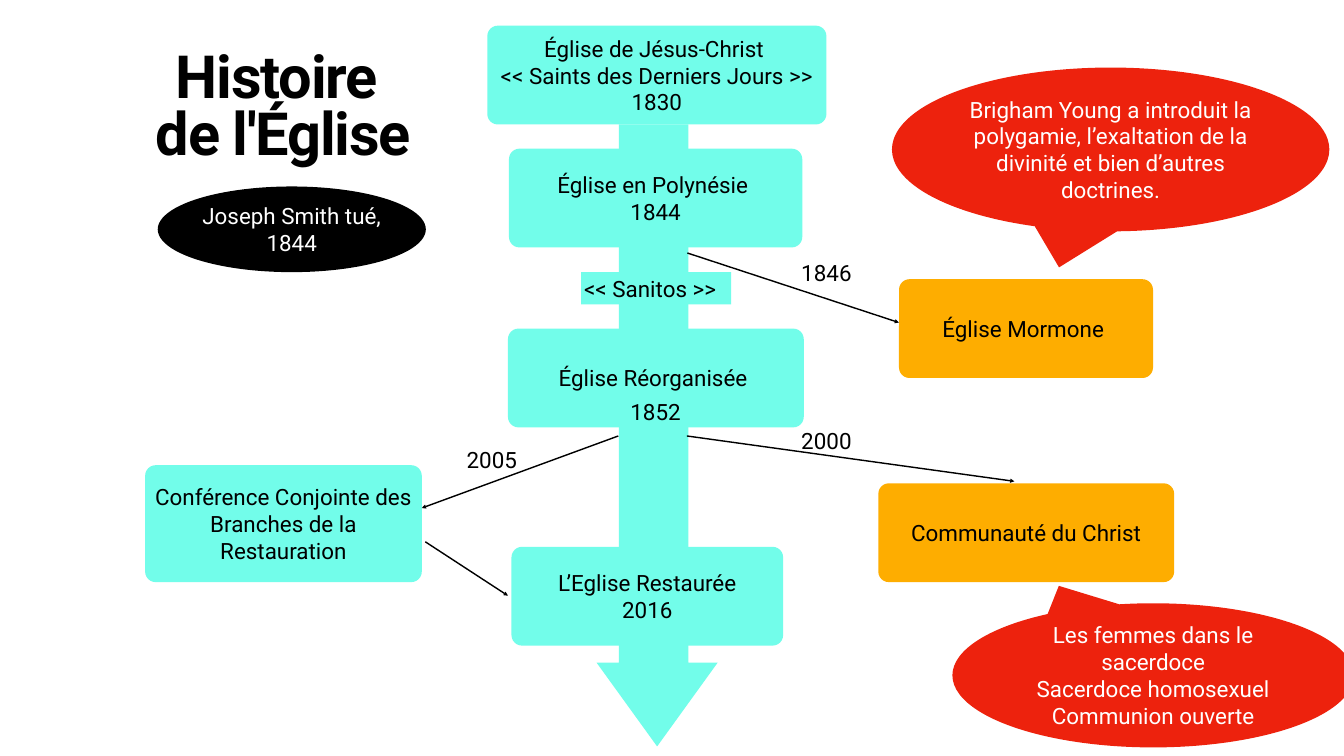
from lxml.etree import SubElement as Sub
from pptx import Presentation
from pptx.dml.color import RGBColor
from pptx.enum.shapes import MSO_CONNECTOR as Link, MSO_SHAPE as Form
from pptx.enum.text import MSO_ANCHOR as Anchor, PP_ALIGN as Align
from pptx.oxml.ns import qn
from pptx.util import Inches, Pt

AQUA, GOLD, RED = "72FDEA", "FEAD00", "ED220D"
BLACK, WHITE = "000000", "FFFFFF"
FRAME = dict(vertical_anchor=Anchor.MIDDLE, margin_left=Inches(0.06), margin_right=Inches(0.06),
             margin_top=Inches(0.06), margin_bottom=Inches(0.06))
BODY = dict(name="Roboto", size=Pt(32), bold=False)
HEAD = dict(name="Roboto", size=Pt(85), bold=True)
ROW = 1.96
YEAR = 1.6


def paint(fmt, tone):
    """Give a fill a solid colour."""
    fmt.solid()
    fmt.fore_color.rgb = RGBColor.from_string(tone)


def style(item, values):
    """Set every attribute named in a dict."""
    for key, value in values.items():
        setattr(item, key, value)


def write(shape, lines, tone=BLACK, font=BODY, wrap=True, align=Align.CENTER, space=1.0):
    """Write one paragraph for each line and format it."""
    frame = shape.text_frame
    style(frame, FRAME | dict(word_wrap=wrap))
    frame.text = "\n".join(lines)
    for para in frame.paragraphs:
        style(para, dict(alignment=align, line_spacing=space, space_before=Pt(0)))
        for run in para.runs:
            style(run.font, font)
            paint(run.font.fill, tone)


def plain(shape, tone):
    """Give a shape a flat fill with no line or shadow."""
    shape.shadow.inherit = False
    paint(shape.fill, tone)
    shape.line.fill.background()


def block(slide, box, lines, fill=AQUA, form=Form.ROUNDED_RECTANGLE, adj=(0.106,), **text):
    """Add a filled shape with text."""
    shape = slide.shapes.add_shape(form, *map(Inches, box))
    plain(shape, fill)
    for at, value in enumerate(adj):
        shape.adjustments[at] = value
    write(shape, lines, **text)


def label(slide, mid, top, text):
    """Add a year with no fill, centred on a point."""
    box = slide.shapes.add_textbox(*map(Inches, (mid - YEAR / 2, top, YEAR, 0.64)))
    write(box, [text])


def arrow(slide, *ends):
    """Add a thin arrow between two points."""
    line = slide.shapes.add_connector(Link.STRAIGHT, *map(Inches, ends))
    paint(line.line.fill, BLACK)
    line.line.width = Pt(2)
    Sub(line.line._get_or_add_ln(), qn("a:tailEnd"), type="triangle")
    Sub(line._element.spPr, qn("a:effectLst"))


def title(slide, left, top, width, height):
    """Place the slide title and the note on the death below it."""
    head = slide.shapes.title
    style(head, dict(left=Inches(left), top=Inches(top), width=Inches(width), height=Inches(height)))
    write(head, ["Histoire ", "de l'Église"], font=HEAD, wrap=False, space=0.8)
    for para in head.text_frame.paragraphs:
        for run in para.runs:
            run._r.get_or_add_rPr().set("spc", "-170")
    block(slide, (left + 0.32, top + 2.85, 5.32, 1.7), ["Joseph Smith tué, 1844"],
          BLACK, Form.OVAL, (), tone=WHITE)


def trunk(slide, left, top):
    """Draw the main arrow and the churches along it."""
    points = [(2.61, 1.96), (2.61, 12.64), (2.17, 12.64), (3.37, 14.3),
              (4.57, 12.64), (3.99, 12.64), (3.99, 1.96)]
    spots = [(Inches(left + x), Inches(top + y)) for x, y in points]
    shaft = slide.shapes.build_freeform(*spots[0])
    shaft.add_line_segments(spots[1:])
    plain(shaft.convert_to_shape(), AQUA)
    stops = [
        (0, 0, 6.73, ["Église de Jésus-Christ ", "<< Saints des Derniers Jours >>", "1830"]),
        (0.43, 2.44, 5.82, ["Église en Polynésie ", "1844"]),
        (0.41, 6.01, 5.87, ["Église Réorganisée "]),
        (0.48, 10.34, 5.39, ["L’Eglise Restaurée", "2016"]),
    ]
    for x, y, width, lines in stops:
        block(slide, (left + x, top + y, width, ROW), lines)
    label(slide, left + 3.34, top + 7.33, "1852")
    block(slide, (left + 1.86, top + 4.89, 2.98, 0.64), ["<< Sanitos >>"],
          form=Form.RECTANGLE, adj=(), align=Align.LEFT)


def west(slide, left, top):
    """Draw the branch that leaves the trunk and joins it again."""
    block(slide, (left, top, 5.49, 2.32), ["Conférence Conjointe des Branches de la Restauration"],
          adj=(0.09,))
    arrow(slide, left + 9.39, top - 0.58, left + 5.49, top + 0.85)
    arrow(slide, left + 5.56, top + 1.52, left + 7.2, top + 2.59)
    label(slide, left + 6.88, top - 0.43, "2005")


def east(slide, box, name, year, spot, ends, bubble, adj, lines):
    """Draw a church that split off, with its year and its callout."""
    left, top = box[:2]
    block(slide, box, [name], GOLD)
    arrow(slide, *(value + base for value, base in zip(ends, (left, top) * 2)))
    label(slide, left + spot[0], top + spot[1], year)
    x, y, width, height = bubble
    block(slide, (left + x, top + y, width, height), lines, RED, Form.OVAL_CALLOUT, adj, tone=WHITE)


def main():
    """Build the slide and save it."""
    deck = Presentation()
    style(deck, dict(slide_width=Inches(26.67), slide_height=Inches(15)))
    slide = deck.slides.add_slide(deck.slide_layouts[5])
    paint(slide.background.fill, WHITE)
    trunk(slide, 9.67, 0.51)
    title(slide, 2.81, 0.85, 5.63, 2.66)
    west(slide, 2.88, 9.23)
    east(slide, (17.84, 5.54, 5.04, ROW), "Église Mormone ", "1846", (-1.44, -0.46),
         (-4.2, -0.52, 0, 0.86), (-0.14, -4.2, 8.68, 3.25), (-0.118, 0.72),
         ["Brigham Young a introduit la polygamie, l’exaltation de la divinité "
          "et bien d’autres doctrines."])
    east(slide, (17.43, 9.59, 5.87, ROW), "Communauté du Christ", "2000", (-1.03, -1.17),
         (-3.8, -0.94, 2.7, -0.04), (1.47, 2.38, 7.97, 2.86), (-0.235, -0.621),
         ["Les femmes dans le sacerdoce", "Sacerdoce homosexuel", "Communion ouverte"])
    deck.save("out.pptx")


if __name__ == "__main__":
    main()
